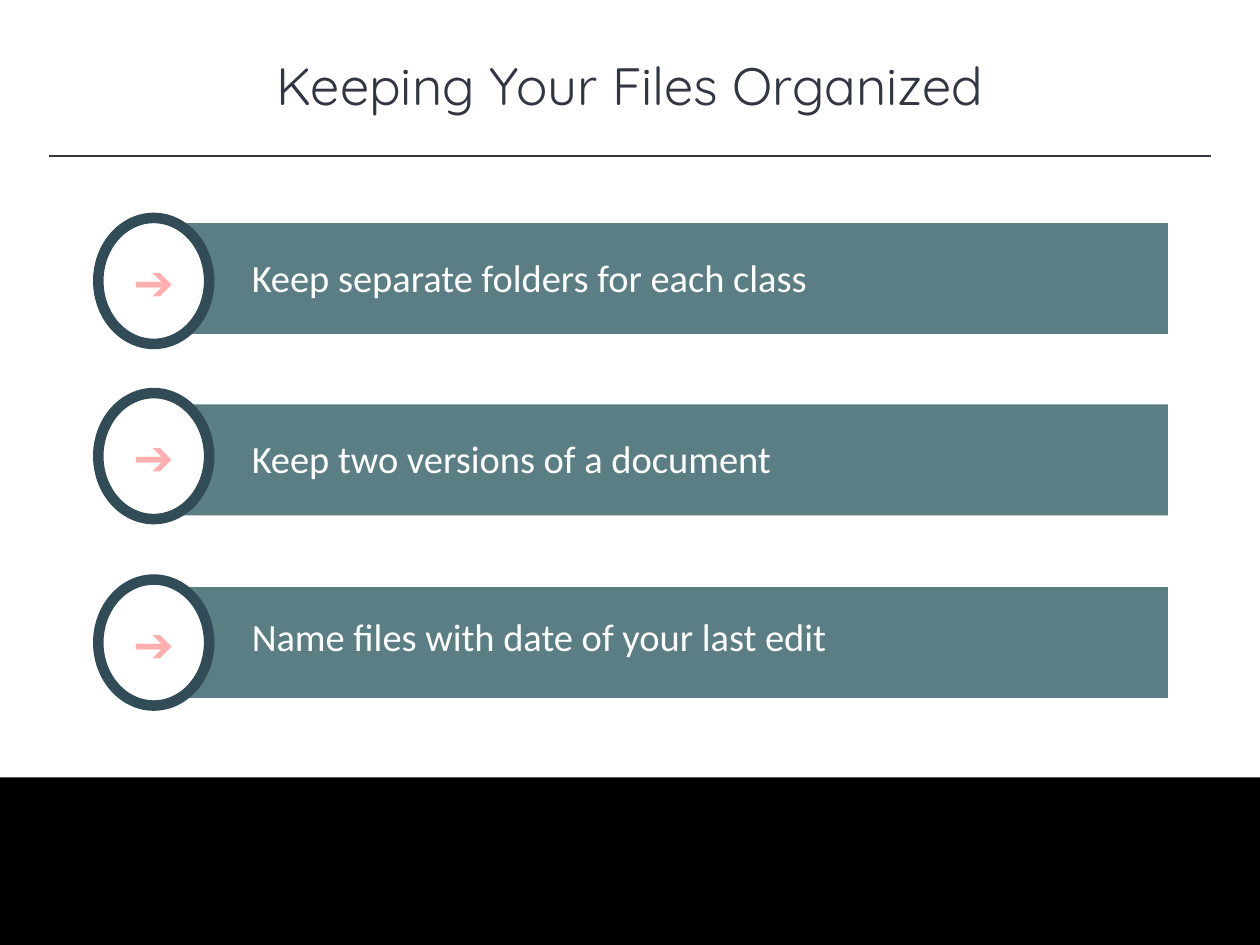
from pptx import Presentation
from pptx.dml.color import RGBColor
from pptx.enum.shapes import MSO_CONNECTOR, MSO_SHAPE
from pptx.enum.text import MSO_ANCHOR, PP_ALIGN
from pptx.oxml.ns import qn
from pptx.util import Inches, Pt
from lxml.etree import SubElement

WIDTH, HEIGHT = 10, 7.5
INK, TEAL, NAVY, PINK = "323542", "5A7E83", "314C57", "FFAFB0"
WHITE, BLACK = "FFFFFF", "000000"
BAR_HEIGHT = 0.88
BADGE_WIDTH, BADGE_HEIGHT = 0.88, 1
LABEL_HEIGHT = 0.47

# Text, then the tops of bar, label and badge
ROWS = [
    ("Keep separate folders for each class", 1.77, 1.97, 1.73),
    ("Keep two versions of a document", 3.21, 3.4, 3.12),
    ("Name files with date of your last edit", 4.66, 4.82, 4.6),
]


def color(value):
    return RGBColor.from_string(value)


def add_filled(shapes, kind, box, fill):
    shape = shapes.add_shape(kind, *map(Inches, box))
    shape.shadow.inherit = False
    shape.fill.solid()
    shape.fill.fore_color.rgb = color(fill)
    shape.line.fill.background()
    return shape


def write(shape, text, size, font, ink, align, anchor=MSO_ANCHOR.TOP, bold=False):
    frame = shape.text_frame
    frame.word_wrap = True
    frame.vertical_anchor = anchor
    paragraph = frame.paragraphs[0]
    paragraph.text = text
    paragraph.alignment = align
    paragraph.font.size = Pt(size)
    paragraph.font.name = font
    paragraph.font.bold = bold
    paragraph.font.color.rgb = color(ink)


def add_header(slide, left, top, width, margin):
    title = slide.shapes.add_textbox(*map(Inches, (left, top, width, 0.61)))
    write(title, "Keeping Your Files Organized", 30, "Quicksand", INK, PP_ALIGN.CENTER)
    rule_top = Inches(top + 0.87)
    rule = slide.shapes.add_connector(
        MSO_CONNECTOR.STRAIGHT,
        Inches(left + margin), rule_top, Inches(left + width - margin), rule_top)
    rule.line.color.rgb = color(INK)
    rule.line.width = Pt(1)
    SubElement(rule._element.spPr, qn("a:effectLst"))


def add_row(shapes, left, width, text, bar_top, label_top, badge_top):
    bar_left = left + 0.68
    label_left = left + 1.12
    right = left + width
    add_filled(shapes, MSO_SHAPE.RECTANGLE,
               (bar_left, bar_top, right - bar_left, BAR_HEIGHT), TEAL)
    label = add_filled(shapes, MSO_SHAPE.RECTANGLE,
                       (label_left, label_top, right - label_left, LABEL_HEIGHT), TEAL)
    write(label, text, 22, "Calibri", WHITE, PP_ALIGN.LEFT)
    badge = add_filled(shapes, MSO_SHAPE.OVAL,
                       (left, badge_top, BADGE_WIDTH, BADGE_HEIGHT), WHITE)
    badge.line.color.rgb = color(NAVY)
    badge.line.width = Pt(6)
    write(badge, "➔", 28, "Arial", PINK, PP_ALIGN.CENTER, MSO_ANCHOR.MIDDLE, bold=True)


def main():
    presentation = Presentation()
    presentation.slide_width = Inches(WIDTH)
    presentation.slide_height = Inches(HEIGHT)
    slide = presentation.slides.add_slide(presentation.slide_layouts[6])
    slide.background.fill.solid()
    slide.background.fill.fore_color.rgb = color(WHITE)

    add_header(slide, 0, 0.37, WIDTH, 0.39)
    footer_top = 6.17
    add_filled(slide.shapes, MSO_SHAPE.RECTANGLE,
               (0, footer_top, WIDTH, HEIGHT - footer_top), BLACK)
    tips = slide.shapes.add_group_shape()
    for row in ROWS:
        add_row(tips.shapes, 0.78, 8.49, *row)

    presentation.save("out.pptx")


if __name__ == "__main__":
    main()
